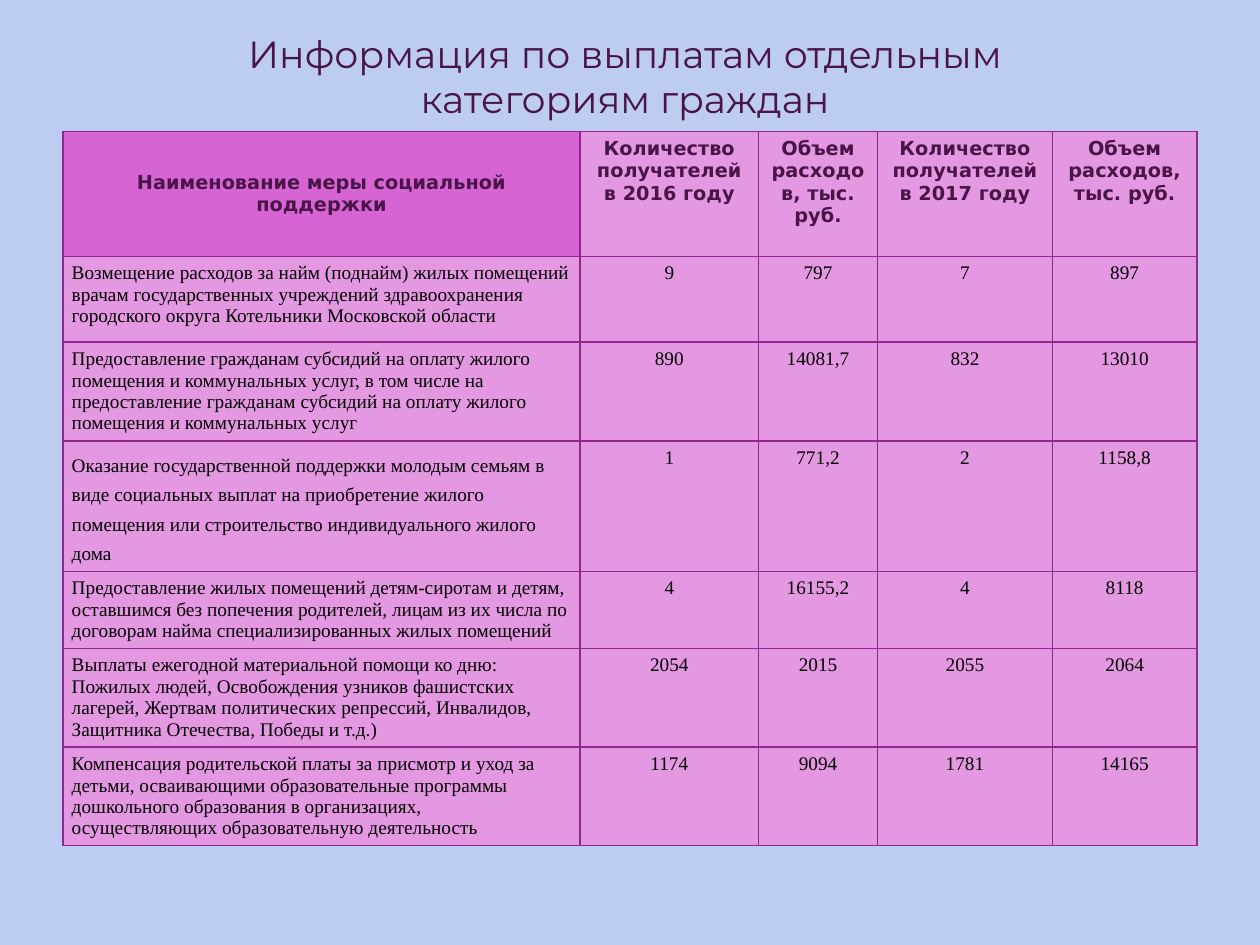
from dataclasses import dataclass

from lxml import etree
from pptx import Presentation
from pptx.dml.color import RGBColor
from pptx.enum.text import MSO_ANCHOR, MSO_AUTO_SIZE, PP_ALIGN
from pptx.oxml.ns import qn
from pptx.util import Pt

LEFT, CENTER = PP_ALIGN.LEFT, PP_ALIGN.CENTER
TOP, MIDDLE = MSO_ANCHOR.TOP, MSO_ANCHOR.MIDDLE
NO_AUTOFIT = MSO_AUTO_SIZE.NONE
TITLE_ONLY = 5


@dataclass(frozen=True)
class Theme:
    """Colours, fonts and type sizes of the slide."""
    background: str = "BDCDF1"
    heading: str = "491447"
    body: str = "000000"
    accent_fill: str = "D665D3"
    cell_fill: str = "E498E1"
    border: str = "92278F"
    title_font: str = "Montserrat"
    header_font: str = "DejaVu Sans"
    body_font: str = "Times New Roman"
    title_size: float = 21.6
    table_size: float = 11
    border_width: float = 1
    wide_spacing: float = 16.8


THEME = Theme()
TITLE_LINES = ["Информация по выплатам отдельным ", "категориям граждан "]
EXPENSES = ["Объем расходов, тыс. руб."]
HEADERS = [
    ["Наименование меры социальной поддержки"],
    ["Количество получателей", "в 2016 году"],
    EXPENSES,
    ["Количество получателей", "в 2017 году"],
    EXPENSES,
]
MEASURES = [
    ("Возмещение расходов за найм (поднайм) жилых помещений врачам "
     "государственных учреждений здравоохранения городского округа "
     "Котельники Московской области", "9", "797", "7", "897"),
    ("Предоставление гражданам субсидий на оплату жилого помещения и "
     "коммунальных услуг, в том числе на предоставление гражданам субсидий "
     "на оплату жилого помещения и коммунальных услуг",
     "890", "14081,7", "832", "13010"),
    ("Оказание государственной поддержки молодым семьям в виде социальных "
     "выплат на приобретение жилого помещения или строительство "
     "индивидуального жилого дома", "1", "771,2", "2", "1158,8"),
    ("Предоставление жилых помещений детям-сиротам и детям, оставшимся без "
     "попечения родителей, лицам из их числа по договорам найма "
     "специализированных жилых помещений", "4", "16155,2", "4", "8118"),
    ("Выплаты ежегодной материальной помощи ко дню: Пожилых людей, "
     "Освобождения узников фашистских лагерей, Жертвам политических "
     "репрессий, Инвалидов, Защитника Отечества, Победы и т.д.)",
     "2054", "2015", "2055", "2064"),
    ("Компенсация родительской платы за присмотр и уход за детьми, "
     "осваивающими образовательные программы дошкольного образования в "
     "организациях, осуществляющих образовательную деятельность",
     "1174", "9094", "1781", "14165"),
]
WIDE_SPACED_MEASURE = 2
COLUMN_WIDTHS = [295.5, 102, 68, 100, 82.5]
ROW_HEIGHTS = [71.5, 49, 56.5, 74, 44, 56.5, 56]


def add_span(para, text, font, size, color, bold=False):
    """Append one formatted run to a paragraph."""
    span = para.add_run()
    span.text = text
    span.font.name = font
    span.font.size = Pt(size)
    span.font.bold = bold
    span.font.color.rgb = RGBColor.from_string(color)


def add_border(cell):
    """Draw a thin line on all four sides of a cell."""
    properties = cell._tc.get_or_add_tcPr()
    for side in ("a:lnL", "a:lnR", "a:lnT", "a:lnB"):
        line = etree.SubElement(properties, qn(side), w=str(Pt(THEME.border_width)))
        fill = etree.SubElement(line, qn("a:solidFill"))
        etree.SubElement(fill, qn("a:srgbClr"), val=THEME.border)


def fill_cell(cell, lines, font, color, bold=False, align=CENTER,
              anchor=TOP, fill=THEME.cell_fill, spacing=None):
    """Write the lines of a cell and style its box."""
    cell.margin_left = cell.margin_right = Pt(5)
    cell.margin_top = cell.margin_bottom = Pt(3.6)
    cell.vertical_anchor = anchor
    add_border(cell)
    cell.fill.solid()
    cell.fill.fore_color.rgb = RGBColor.from_string(fill)
    frame = cell.text_frame
    for index, line in enumerate(lines):
        para = frame.add_paragraph() if index else frame.paragraphs[0]
        para.alignment = align
        if spacing:
            para.line_spacing = Pt(spacing)
        add_span(para, line, font, THEME.table_size, color, bold)


def place_title(page, left, top, width, height):
    """Place the slide title in the given box."""
    box = page.shapes.title
    box.left, box.top, box.width, box.height = map(Pt, (left, top, width, height))
    frame = box.text_frame
    frame.word_wrap = True
    frame.auto_size = NO_AUTOFIT
    frame.vertical_anchor = MIDDLE
    para = frame.paragraphs[0]
    para.alignment = CENTER
    for index, line in enumerate(TITLE_LINES):
        if index:
            para.add_line_break()
        add_span(para, line, THEME.title_font, THEME.title_size, THEME.heading)


def place_table(page, left, top, width, height):
    """Place the table of payments in the given box."""
    table = page.shapes.add_table(
        len(ROW_HEIGHTS), len(COLUMN_WIDTHS),
        Pt(left), Pt(top), Pt(width), Pt(height)).table
    table.horz_banding = False
    for column, share in zip(table.columns, COLUMN_WIDTHS):
        column.width = Pt(width * share / sum(COLUMN_WIDTHS))
    for row, share in zip(table.rows, ROW_HEIGHTS):
        row.height = Pt(height * share / sum(ROW_HEIGHTS))
    for index, lines in enumerate(HEADERS):
        fill_cell(table.cell(0, index), lines, THEME.header_font, THEME.heading,
                  bold=True, anchor=TOP if index else MIDDLE,
                  fill=THEME.cell_fill if index else THEME.accent_fill)
    for index, (measure, *values) in enumerate(MEASURES):
        spacing = THEME.wide_spacing if index == WIDE_SPACED_MEASURE else None
        fill_cell(table.cell(index + 1, 0), [measure], THEME.body_font,
                  THEME.body, align=LEFT, spacing=spacing)
        for column, value in enumerate(values, start=1):
            fill_cell(table.cell(index + 1, column), [value],
                      THEME.body_font, THEME.body)


def main():
    """Build the slide and save the deck."""
    deck = Presentation()
    deck.slide_width, deck.slide_height = Pt(720), Pt(540)
    page = deck.slides.add_slide(deck.slide_layouts[TITLE_ONLY])
    page.background.fill.solid()
    page.background.fill.fore_color.rgb = RGBColor.from_string(THEME.background)
    place_title(page, 36, 15, 648, 57)
    place_table(page, 36, 75, sum(COLUMN_WIDTHS), sum(ROW_HEIGHTS))
    deck.save("out.pptx")


if __name__ == "__main__":
    main()
